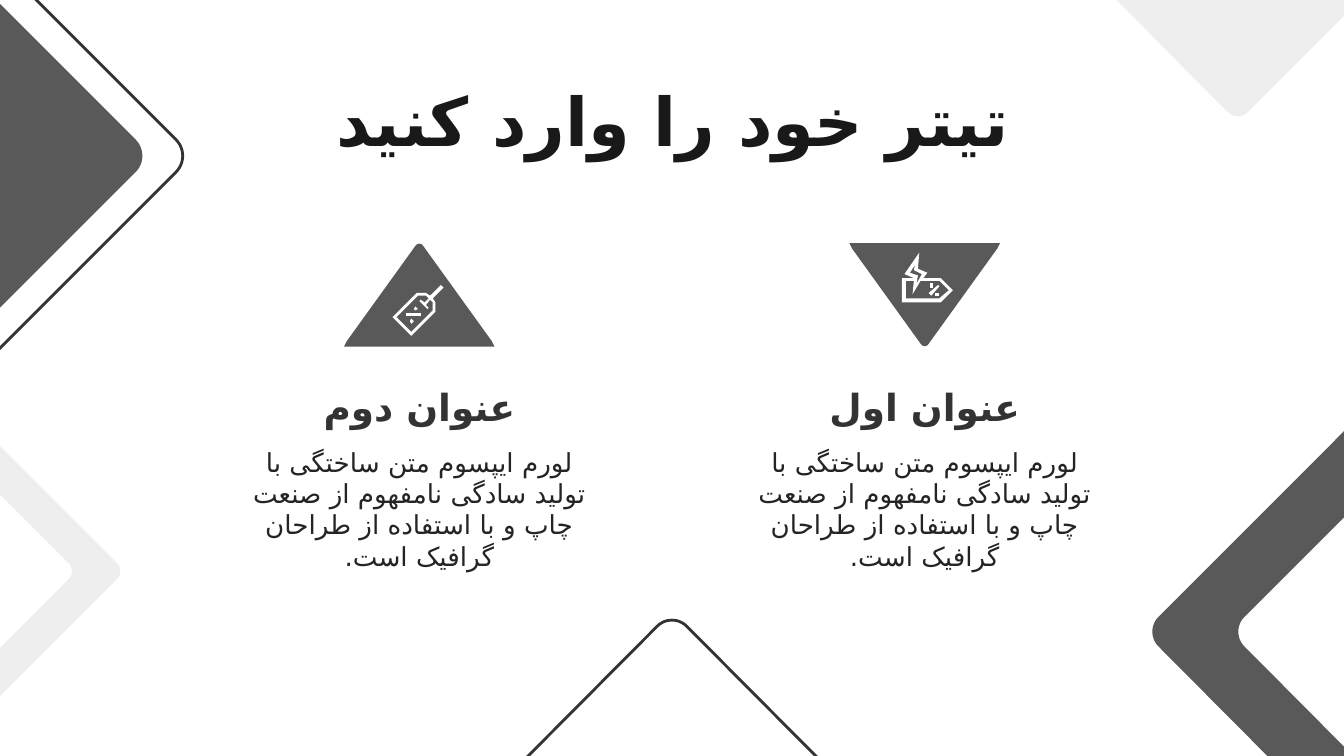
import math
import pptx
import pptx.util
import pptx.dml.color
import pptx.enum.text
import pptx.oxml.ns
from lxml import etree

Inches = pptx.util.Inches
RGBColor = pptx.dml.color.RGBColor
MSO_ANCHOR = pptx.enum.text.MSO_ANCHOR
DARK = RGBColor(0x59, 0x59, 0x59)
LIGHT = RGBColor(0xEE, 0xEE, 0xEE)
WHITE = RGBColor(0xFF, 0xFF, 0xFF)
OUTLINE = RGBColor(0x33, 0x33, 0x33)
TITLE = RGBColor(0x19, 0x19, 0x19)
BODY = RGBColor(0x24, 0x24, 0x24)


def add_outline(shapes, contours, fill=None, line=None):
    builder = None
    for contour in contours:
        pts = []
        for i, (x, y, *cut) in enumerate(contour):
            if not cut:
                pts.append((x, y))
                continue
            ends = []
            for qx, qy, *_ in (contour[i - 1], contour[(i + 1) % len(contour)]):
                t = cut[0] / math.hypot(qx - x, qy - y)
                ends.append((x + t * (qx - x), y + t * (qy - y)))
            (ax, ay), (bx, by) = ends
            for n in range(13):
                t = n / 12
                a = (1 - t) ** 3 + 1.35 * t * (1 - t) ** 2
                b = t ** 3 + 1.35 * t ** 2 * (1 - t)
                pts.append((x + a * (ax - x) + b * (bx - x), y + a * (ay - y) + b * (by - y)))
        pts = [(Inches(x), Inches(y)) for x, y in pts]
        if builder is None:
            builder = shapes.build_freeform(*pts[0], scale=1.0)
        else:
            builder.move_to(*pts[0])
        builder.add_line_segments(pts[1:], close=True)
    sp = builder.convert_to_shape()
    sp.shadow.inherit = False
    if fill is None:
        sp.fill.background()
    else:
        sp.fill.solid()
        sp.fill.fore_color.rgb = fill
    if line is None:
        sp.line.fill.background()
    else:
        sp.line.color.rgb = line
        sp.line.width = pptx.util.Pt(1.5)


def add_text(s, text, box, size, color, bold=False, anchor=MSO_ANCHOR.TOP):
    tf = s.shapes.add_textbox(*[Inches(v) for v in box]).text_frame
    tf.word_wrap = True
    tf.vertical_anchor = anchor
    tf.margin_left = tf.margin_right = tf.margin_top = tf.margin_bottom = Inches(0.1)
    p = tf.paragraphs[0]
    p.text = text
    p.alignment = pptx.enum.text.PP_ALIGN.CENTER
    p.font.size = pptx.util.Pt(size)
    p.font.bold = bold
    p.font.color.rgb = color
    p.font.name = "Calibri"
    p._p.get_or_add_pPr().set("rtl", "1")
    r = p.runs[0]
    r.font.name = "Calibri"
    rPr = r._r.get_or_add_rPr()
    rPr.set("lang", "fa-IR")
    etree.SubElement(rPr, pptx.oxml.ns.qn("a:cs"), typeface="DejaVu Sans")


prs = pptx.Presentation()
prs.slide_width = Inches(10)
prs.slide_height = Inches(10) * 9 // 16
s = prs.slides.add_slide(prs.slide_layouts[6])

right_bracket = [(8.51, 4.7, 0.155), (10.36, 6.56, 0.155), (10.68, 6.24),
                 (9.15, 4.7, 0.155), (10.68, 3.17), (10.36, 2.85, 0.155)]
bottom_peak = [(3.11, 6.51), (3.16, 6.4), (5, 4.55, 0.155), (6.84, 6.4), (6.89, 6.51)]
left_peak = [(-0.76, -0.96), (-0.64, -0.91), (1.43, 1.16, 0.17), (-0.64, 3.23), (-0.76, 3.28)]
left_block = [(x - 0.3, *rest) for x, *rest in left_peak]
left_bracket = [(0.93, 4.25, 0.085), (-0.12, 5.3, 0.085), (-0.3, 5.12),
                (0.57, 4.25, 0.085), (-0.3, 3.38), (-0.12, 3.2, 0.085)]
top_block = [(7.9, -0.45), (7.93, -0.38), (9.21, 0.91, 0.11), (10.5, -0.38), (10.53, -0.45)]

for contour, fill, line in [
    (right_bracket, DARK, None),
    (bottom_peak, None, OUTLINE),
    (left_peak, None, OUTLINE),
    (left_block, DARK, None),
    (left_bracket, LIGHT, None),
    (top_block, LIGHT, None),
]:
    add_outline(s.shapes, [contour], fill, line)

body = "لورم ایپسوم متن ساختگی با تولید سادگی نامفهوم از صنعت چاپ و با استفاده از طراحان گرافیک است."
for left, heading in [(1.78, "عنوان دوم"), (5.54, "عنوان اول")]:
    add_text(s, heading, (left, 2.76, 2.68, 0.47), 20, OUTLINE, True)
    add_text(s, body, (left, 3.23, 2.68, 1.11), 14, BODY, anchor=MSO_ANCHOR.MIDDLE)
add_text(s, "تیتر خود را وارد کنید", (0.79, 0.49, 8.43, 0.63), 36, TITLE, True)

triangle_down = [(6.32, 1.81), (6.34, 1.85), (6.88, 2.6, 0.05), (7.42, 1.85), (7.44, 1.81)]
triangle_up = [(x - 3.76, 4.39 - y, *cut) for x, y, *cut in triangle_down]
for triangle in (triangle_up, triangle_down):
    add_outline(s.shapes, [triangle], DARK)

flash_tag = [
    [[(6.92, 2.11), (6.92, 2.14), (6.94, 2.14), (6.94, 2.11)]],
    [[(6.96, 2.18), (6.96, 2.2), (6.99, 2.2), (6.99, 2.18)]],
    [[(6.98, 2.12), (6.91, 2.18), (6.93, 2.2), (6.99, 2.13)]],
    [
        [(6.81, 1.97), (6.8, 2.01), (6.86, 2.04), (6.82, 2.11), (6.83, 2.05), (6.77, 2.03)],
        [(6.99, 2.09), (7.06, 2.16), (6.99, 2.22), (6.74, 2.22), (6.74, 2.09), (6.8, 2.09),
         (6.79, 2.19), (6.85, 2.09)],
        [(6.84, 1.88), (6.73, 2.04), (6.8, 2.07), (6.71, 2.07), (6.71, 2.25), (7, 2.25),
         (7.09, 2.16), (7, 2.07), (6.87, 2.07), (6.9, 2.03), (6.83, 2)],
    ],
]
string_tag = [
    [[(3.09, 2.28), (3.08, 2.3), (3.09, 2.31), (3.11, 2.3)]],
    [[(3.06, 2.37), (3.05, 2.39), (3.06, 2.41), (3.08, 2.39)]],
    [[(3.02, 2.33), (3.02, 2.35), (3.13, 2.35), (3.13, 2.33)]],
    [
        [(3.17, 2.2), (3.19, 2.22), (3.16, 2.25), (3.13, 2.23), (3.12, 2.24), (3.18, 2.3),
         (3.19, 2.29), (3.17, 2.27), (3.2, 2.23), (3.22, 2.25), (3.22, 2.31), (3.06, 2.47),
         (2.95, 2.36), (3.11, 2.2)],
        [(3.28, 2.12), (3.2, 2.2), (3.17, 2.18), (3.1, 2.18), (2.92, 2.36), (3.06, 2.5),
         (3.24, 2.32), (3.24, 2.25), (3.22, 2.22), (3.3, 2.14)],
    ],
]
for icon in (flash_tag, string_tag):
    group = s.shapes.add_group_shape()
    for contours in icon:
        add_outline(group.shapes, contours, WHITE)

prs.save("out.pptx")
